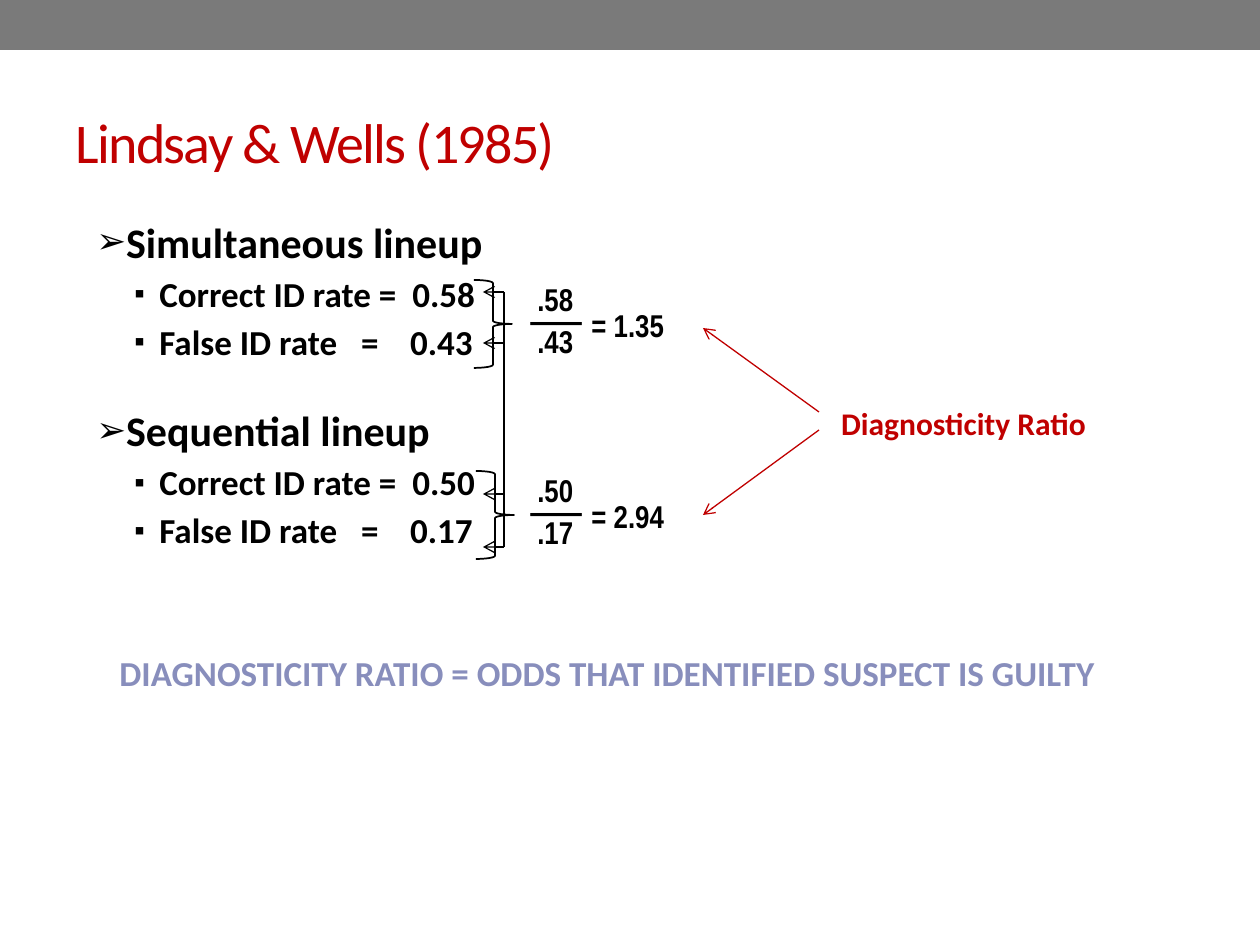
from lxml.etree import SubElement
from pptx import Presentation
from pptx.dml.color import RGBColor
from pptx.enum.shapes import MSO_CONNECTOR, MSO_SHAPE
from pptx.enum.text import MSO_ANCHOR, PP_ALIGN
from pptx.oxml.ns import qn
from pptx.util import Emu, Pt

COLORS = {"band": "7A7A7A", "red": "C00000", "black": "000000", "violet": "888EBC"}
EMU_PER_PX = 914400 / 126


def px(length):
    return Emu(round(length * EMU_PER_PX))


def color(name):
    return RGBColor.from_string(COLORS[name])


class SlideBuilder:
    def __init__(self, slide, font="Calibri"):
        self.slide = slide
        self.font = font

    def style(self, paragraph, size, ink, bold=True, font=None, tracking=None):
        for run in paragraph.runs:
            run.font.name = font or self.font
            run.font.size = Pt(size)
            run.font.bold = bold
            run.font.color.rgb = color(ink)
            if tracking:
                run.font._element.set("spc", str(tracking))

    def frame(self, box, anchor=MSO_ANCHOR.TOP):
        text_frame = self.slide.shapes.add_textbox(*map(px, box)).text_frame
        text_frame.word_wrap = True
        text_frame.vertical_anchor = anchor
        return text_frame

    def text(self, box, text, size, ink, align=PP_ALIGN.LEFT, anchor=MSO_ANCHOR.TOP, **look):
        text_frame = self.frame(box, anchor)
        text_frame.text = text
        paragraph = text_frame.paragraphs[0]
        paragraph.alignment = align
        self.style(paragraph, size, ink, **look)

    def fraction(self, box, numerator, denominator):
        text_frame = self.frame(box)
        text_frame.text = f"{numerator}\n——\n{denominator}"
        for paragraph, margin in zip(text_frame.paragraphs, (7, 0, 7)):
            paragraph.line_spacing = Pt(12)
            paragraph._p.get_or_add_pPr().set("marL", str(px(margin)))
            self.style(paragraph, 18, "black", font="Arial Narrow")

    def bullet(self, paragraph, parts, size, mark, margin, before):
        """Fill a bulleted paragraph; a number among the parts is a space widened by that many points."""
        for part in parts:
            run = paragraph.add_run()
            if isinstance(part, str):
                run.text = part
            else:
                run.text = " "
                run.font._element.set("spc", str(round(part * 100)))
        self.style(paragraph, size, "black")
        paragraph.space_before = Pt(before)
        properties = paragraph._p.get_or_add_pPr()
        properties.set("marL", str(px(margin)))
        properties.set("indent", str(px(-25)))
        SubElement(properties, qn("a:buSzPct")).set("val", "85000")
        SubElement(properties, qn("a:buFont")).set("typeface", "Arial")
        SubElement(properties, qn("a:buChar")).set("char", mark)

    def shape(self, preset, box, fill=None, line=None):
        shape = self.slide.shapes.add_shape(preset, *map(px, box))
        shape.shadow.inherit = False
        if fill:
            shape.fill.solid()
            shape.fill.fore_color.rgb = color(fill)
        else:
            shape.fill.background()
        if line:
            shape.line.color.rgb = color(line)
            shape.line.width = Pt(1)
        else:
            shape.line.fill.background()

    def line(self, start, end, ink="black", arrow=False):
        connector = self.slide.shapes.add_connector(
            MSO_CONNECTOR.STRAIGHT, *map(px, (*start, *end)))
        connector.line.color.rgb = color(ink)
        connector.line.width = Pt(0.75)
        if arrow:
            SubElement(connector.line._get_or_add_ln(), qn("a:tailEnd")).set("type", "arrow")
        SubElement(connector._element.spPr, qn("a:effectLst"))


def main():
    presentation = Presentation()
    presentation.slide_width, presentation.slide_height = px(1260), px(945)
    slide = presentation.slides.add_slide(presentation.slide_layouts[6])
    builder = SlideBuilder(slide)

    builder.shape(MSO_SHAPE.RECTANGLE, (0, 0, 1260, 50), fill="band")
    builder.text((63, 73, 1134, 136), "Lindsay & Wells (1985)", 32, "red",
                 anchor=MSO_ANCHOR.MIDDLE, bold=False, tracking=-100)

    lineups = [("Simultaneous lineup", "0.58", "0.43", 3.4),
               ("Sequential lineup", "0.50", "0.17", 24)]
    body = builder.frame((84, 210, 1134, 624))
    paragraphs = [body.paragraphs[0]] + [body.add_paragraph() for _ in range(5)]
    for index, (name, correct, false, before) in enumerate(lineups):
        heading, *rates = paragraphs[index * 3:index * 3 + 3]
        builder.bullet(heading, [name], 24, "➢", 25, before)
        rows = [["Correct ID rate =", 4.5, correct],
                ["False ID rate", 9, "=", 13.5, false]]
        for paragraph, parts in zip(rates, rows):
            paragraph.level = 1
            builder.bullet(paragraph, parts, 20, "▪", 63, 3.4)

    spine, arrow_tip = 504, 483
    for top, bottom in ((343, 547), (292, 494)):
        builder.line((spine, top), (spine, bottom))
        for y in (top, bottom):
            builder.line((spine, y), (arrow_tip, y), arrow=True)

    ratios = [(".58", ".43", "= 1.35", 280, 474), (".50", ".17", "= 2.94", 471, 476)]
    for numerator, denominator, result, top, brace_left in ratios:
        builder.shape(MSO_SHAPE.RIGHT_BRACE, (brace_left, top, 38, 88), line="black")
        builder.fraction((518, top + 11, 89, 77), numerator, denominator)
        builder.text((579, top + 20, 108, 50), result, 18, "black", font="Arial Narrow")

    builder.text((785, 398, 357, 50), "Diagnosticity Ratio", 18, "red", align=PP_ALIGN.CENTER)
    for start_y, end_y in ((412, 328), (430, 515)):
        builder.line((819, start_y), (703, end_y), "red", arrow=True)

    builder.text((107, 645, 1012, 55),
                 "DIAGNOSTICITY RATIO = ODDS THAT IDENTIFIED SUSPECT IS GUILTY", 20, "violet")
    presentation.save("out.pptx")


if __name__ == "__main__":
    main()
